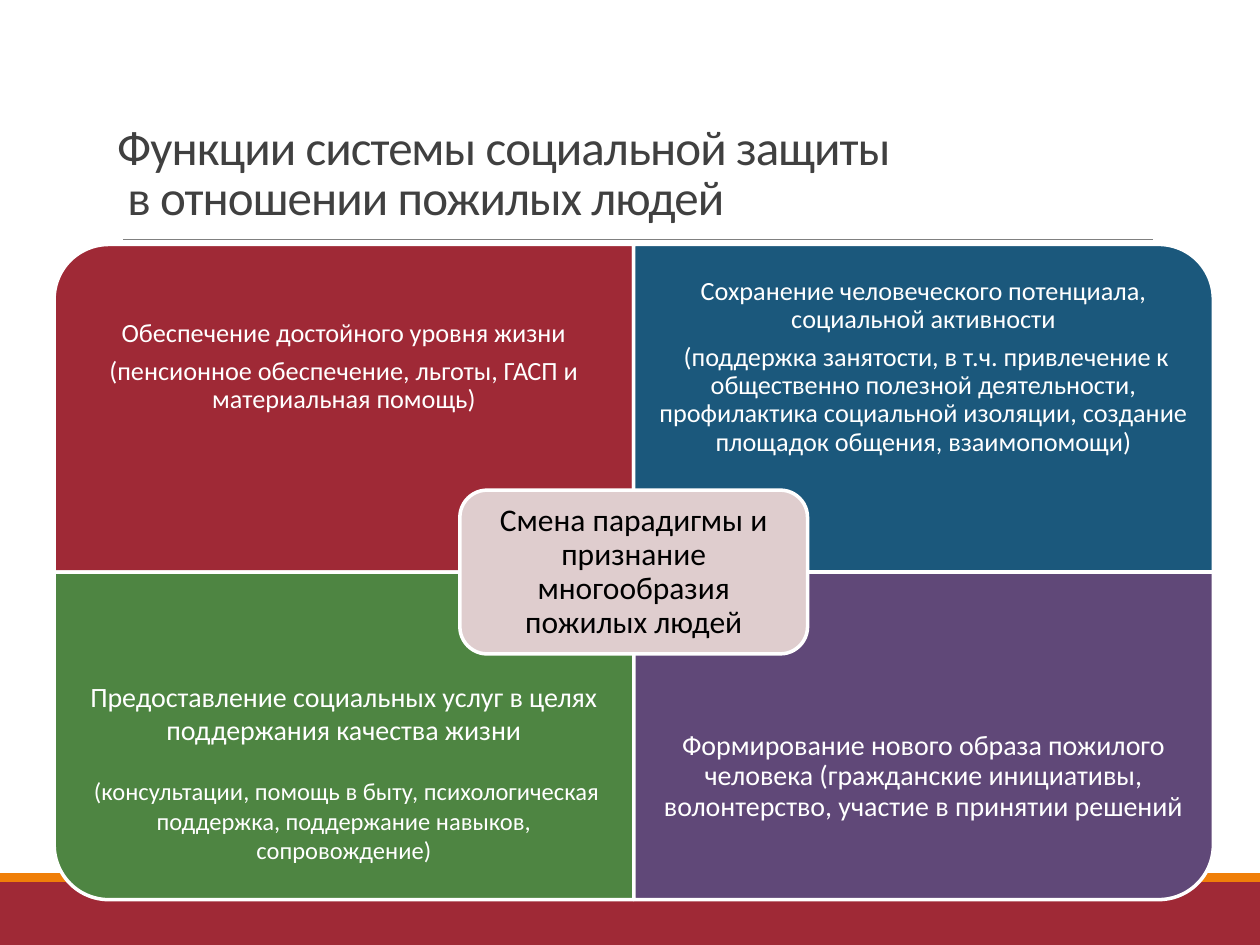
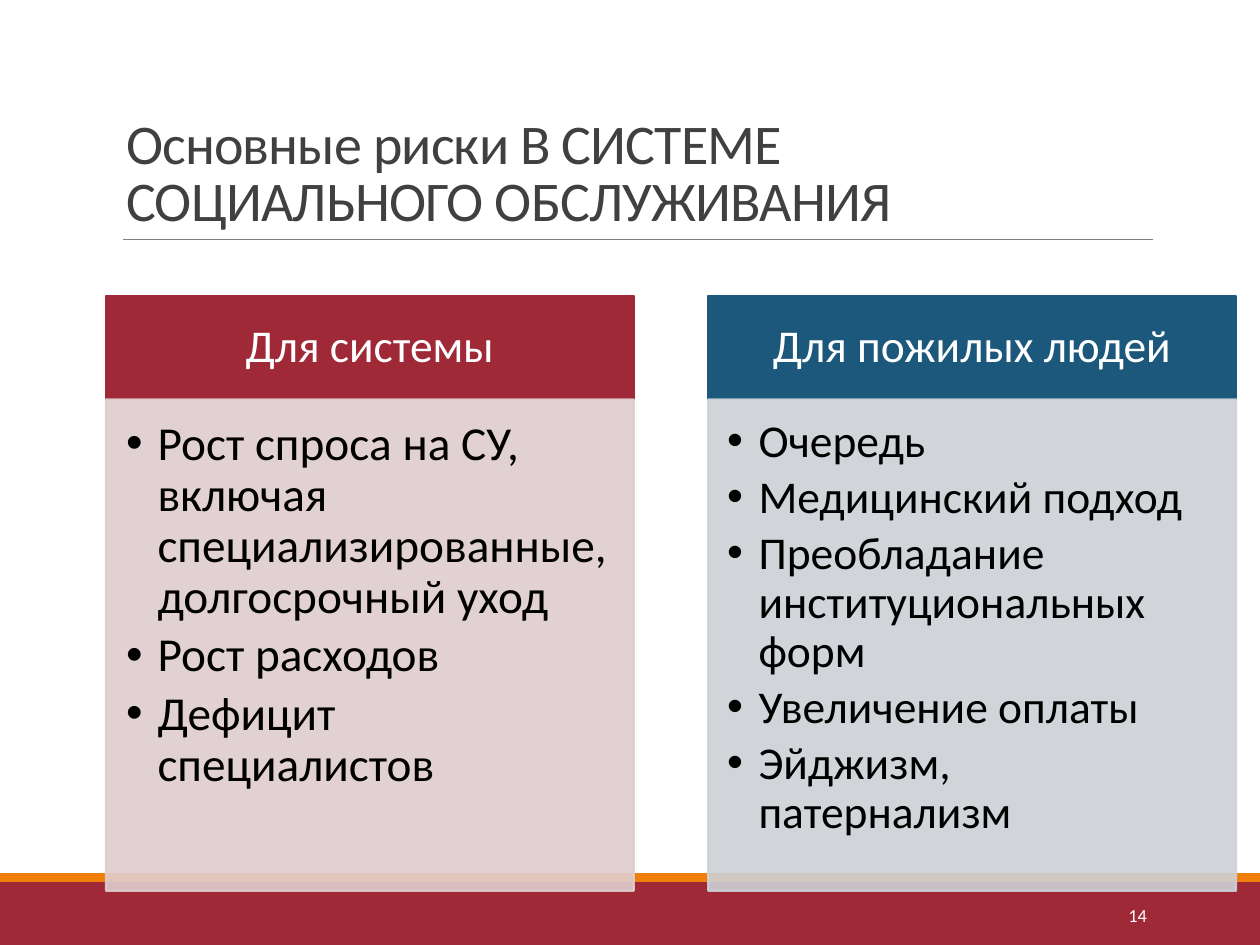
"""Builds two slides on social protection of older people."""
import pptx
import pptx.dml.color
import pptx.enum.shapes
import pptx.enum.text
import pptx.oxml.ns
import pptx.util
from lxml import etree

Inches = pptx.util.Inches
Pt = pptx.util.Pt
RGBColor = pptx.dml.color.RGBColor
Shape = pptx.enum.shapes.MSO_SHAPE
Align = pptx.enum.text.PP_ALIGN
Anchor = pptx.enum.text.MSO_ANCHOR
qn = pptx.oxml.ns.qn

RED = RGBColor(0x9F, 0x29, 0x36)
ORANGE = RGBColor(0xF0, 0x7F, 0x09)
BLUE = RGBColor(0x1B, 0x58, 0x7C)
GREEN = RGBColor(0x4E, 0x85, 0x42)
PURPLE = RGBColor(0x60, 0x48, 0x78)
PINK = RGBColor(0xDF, 0xCD, 0xCE)
PALE_BLUE = RGBColor(0xCD, 0xD1, 0xD7)
GRAY = RGBColor(0x80, 0x80, 0x80)
DARK = RGBColor(0x40, 0x40, 0x40)
WHITE = RGBColor(0xFF, 0xFF, 0xFF)
BLACK = RGBColor(0, 0, 0)
FONT = "Calibri"


class Deck:
    """Holds the shared style and the slide being drawn."""

    def __init__(self):
        self.prs = pptx.Presentation()
        self.prs.slide_width = Inches(10)
        self.prs.slide_height = Inches(7.5)
        self.slide = None

    def new_slide(self, title, place, size):
        self.slide = self.prs.slides.add_slide(self.prs.slide_layouts[5])
        self.shape(Shape.RECTANGLE, (0, 7, 10, 0.5), RED)
        self.shape(Shape.RECTANGLE, (0, 6.93, 10, 0.07), ORANGE)
        self.rule(0.98, 9.15, 1.9)
        heading = self.slide.shapes.title
        heading.left, heading.top, heading.width, heading.height = map(Inches, place)
        self.set_text(heading, [title], size, DARK, align=Align.LEFT,
                      anchor=Anchor.BOTTOM, spacing=0.85, insets=(0.1, 0.05, 0.1, 0.05))
        for paragraph in heading.text_frame.paragraphs:
            for run in paragraph.runs:
                run.font._element.set("spc", "-50")

    def rule(self, left, right, y):
        line = self.slide.shapes.add_connector(
            pptx.enum.shapes.MSO_CONNECTOR.STRAIGHT,
            Inches(left), Inches(y), Inches(right), Inches(y))
        line.line.color.rgb = GRAY
        line.line.width = Pt(0.5)
        etree.SubElement(line._element.spPr, qn("a:effectLst"))

    def shape(self, kind, place, fill, outline=None, width=2, opacity=None, rotation=0):
        shape = self.slide.shapes.add_shape(kind, *map(Inches, place))
        shape.shadow.inherit = False
        shape.rotation = rotation
        shape.fill.solid()
        shape.fill.fore_color.rgb = fill
        if outline is None:
            shape.line.fill.background()
        else:
            shape.line.color.rgb = outline
            shape.line.width = Pt(width)
        if opacity is not None:
            for color in shape._element.spPr.iter(qn("a:srgbClr")):
                etree.SubElement(color, qn("a:alpha")).set("val", str(opacity * 1000))
        return shape

    def text_box(self, place, paragraphs, sizes, color, **style):
        box = self.slide.shapes.add_textbox(*map(Inches, place))
        self.set_text(box, paragraphs, sizes, color, **style)

    def set_text(self, shape, paragraphs, sizes, color, align=Align.CENTER,
                 anchor=Anchor.MIDDLE, spacing=0.9, after=0, insets=(0.12,) * 4,
                 bullets=False):
        frame = shape.text_frame
        frame.word_wrap = True
        frame.auto_size = pptx.enum.text.MSO_AUTO_SIZE.NONE
        frame.vertical_anchor = anchor
        (frame.margin_left, frame.margin_top,
         frame.margin_right, frame.margin_bottom) = map(Inches, insets)
        if not isinstance(sizes, tuple):
            sizes = (sizes,) * len(paragraphs)
        for index, (text, size) in enumerate(zip(paragraphs, sizes)):
            paragraph = frame.add_paragraph() if index else frame.paragraphs[0]
            paragraph.text = text
            paragraph.alignment = align
            paragraph.line_spacing = spacing
            paragraph.space_before = Pt(0)
            paragraph.space_after = Pt(after)
            if bullets:
                self.bullet(paragraph)
            for run in paragraph.runs:
                run.font.name = FONT
                run.font.size = Pt(size)
                run.font.color.rgb = color

    def bullet(self, paragraph):
        properties = paragraph._p.get_or_add_pPr()
        properties.set("marL", str(Inches(0.25)))
        properties.set("indent", str(Inches(-0.25)))
        etree.SubElement(properties, qn("a:buFont")).set("typeface", "Arial")
        etree.SubElement(properties, qn("a:buChar")).set("char", "•")

    def quadrant(self, column, row, fill, rotation, paragraphs, sizes, **style):
        width, height, text_height = 4.6, 2.6, 1.95
        left, top = 0.43 + column * width, 1.94 + row * height
        place = (left, top, width, height)
        if rotation % 180:
            shift = (width - height) / 2
            place = (left + shift, top - shift, height, width)
        self.shape(Shape.ROUND_1_RECTANGLE, place, fill, WHITE, rotation=rotation)
        text_top = top + row * (height - text_height)
        self.text_box((left, text_top, width, text_height), paragraphs, sizes, WHITE, **style)

    def risk_column(self, index, heading, risks, size, fill, pale, insets):
        left, width = 0.84 + index * 4.78, 4.19
        header = self.shape(Shape.RECTANGLE, (left, 2.35, width, 0.82), fill, fill, 1.25)
        self.set_text(header, [heading], 26, WHITE, insets=(0.2, 0.12, 0.2, 0.12))
        body = self.shape(Shape.RECTANGLE, (left, 3.17, width, 3.9), pale, pale, 1.25, opacity=90)
        self.set_text(body, risks, size, BLACK, align=Align.LEFT, anchor=Anchor.TOP,
                      after=size * 0.15, insets=insets, bullets=True)


def functions_slide(deck):
    deck.new_slide("Функции системы социальной защиты\v в отношении пожилых людей",
                   (0.83, 0.44, 8.66, 1.4), 28)
    deck.quadrant(0, 0, RED, 270, [
        "Обеспечение достойного уровня жизни",
        "(пенсионное обеспечение, льготы, ГАСП и материальная помощь)"], 15, after=5.25)
    deck.quadrant(1, 0, BLUE, 0, [
        "Сохранение человеческого потенциала, социальной активности",
        " (поддержка занятости, в т.ч. привлечение к общественно полезной деятельности, "
        "профилактика социальной изоляции, создание площадок общения, взаимопомощи)"],
        15, after=5.25)
    deck.quadrant(0, 1, GREEN, 180, [
        "Предоставление социальных услуг в целях поддержания качества жизни",
        " (консультации, помощь в быту, психологическая поддержка, "
        "поддержание навыков, сопровождение)"], (16, 14), spacing=1.0, after=17,
        anchor=Anchor.TOP, insets=(0.11, 0.2, 0.11, 0.11))
    deck.quadrant(1, 1, PURPLE, 90, [
        "Формирование нового образа пожилого человека (гражданские инициативы, "
        "волонтерство, участие в принятии решений"], 16)
    paradigm = deck.shape(Shape.ROUNDED_RECTANGLE, (3.65, 3.89, 2.76, 1.3), PINK, WHITE)
    deck.set_text(paradigm, ["Смена парадигмы и признание многообразия пожилых людей"],
                  18, BLACK, insets=(0.07,) * 4)


def risks_slide(deck):
    deck.new_slide("Основные риски В СИСТЕМЕ СОЦИАЛЬНОГО ОБСЛУЖИВАНИЯ",
                   (0.9, 0.31, 8.25, 1.59), 32)
    deck.risk_column(0, "Для системы", [
        "Рост спроса на СУ, включая специализированные, долгосрочный уход",
        "Рост расходов",
        "Дефицит специалистов"], 27, RED, PINK, (0.16, 0.16, 0.21, 0.24))
    deck.risk_column(1, "Для пожилых людей", [
        "Очередь",
        "Медицинский подход",
        "Преобладание институциональных форм",
        "Увеличение оплаты",
        "Эйджизм, патернализм"], 26, BLUE, PALE_BLUE, (0.15, 0.15, 0.2, 0.23))
    deck.text_box((8.12, 7.06, 1.08, 0.4), ["14"], 10.5, WHITE, align=Align.RIGHT,
                  spacing=1.0, insets=(0.1, 0.05, 0.1, 0.05))


def main():
    deck = Deck()
    functions_slide(deck)
    risks_slide(deck)
    deck.prs.save("out.pptx")


if __name__ == "__main__":
    main()
